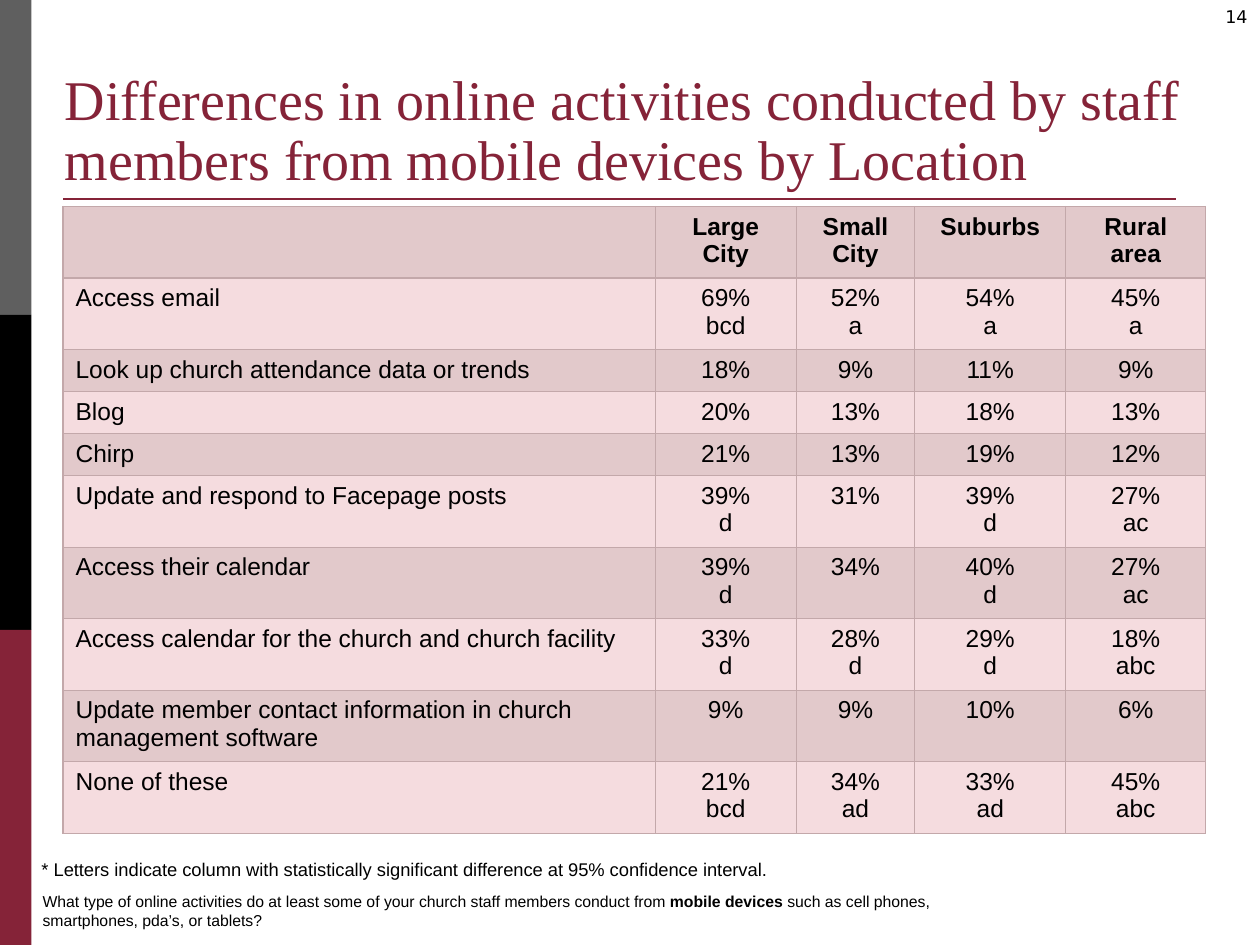
from dataclasses import dataclass

from lxml import etree
from pptx import Presentation
from pptx.dml.color import RGBColor
from pptx.enum import shapes, text
from pptx.oxml import ns
from pptx.util import Pt


@dataclass(frozen=True)
class Theme:
    maroon: str = "852338"
    gray: str = "5F5F5F"
    black: str = "000000"
    band: str = "E2C9CB"
    pale: str = "F5DCDF"
    border: str = "C3A8AA"
    heading_font: str = "Times New Roman"
    body_font: str = "Arial"
    number_font: str = "DejaVu Sans"
    title_size: float = 32
    table_size: float = 14
    note_size: float = 10.5
    question_size: float = 9
    number_size: float = 10


THEME = Theme()
BORDER_WIDTH = 0.75
SINGLE_ROW, DOUBLE_ROW = 22.9, 38.7
COLUMN_WIDTHS = [338.4, 80.64, 67.68, 86.4, 79.92]
LOCATIONS = ["", "Large City", "Small City", "Suburbs", "Rural area"]
ACTIVITIES = [
    ["Access email", "69%\nbcd", "52%\na", "54%\na", "45%\na"],
    ["Look up church attendance data or trends", "18%", "9%", "11%", "9%"],
    ["Blog", "20%", "13%", "18%", "13%"],
    ["Chirp", "21%", "13%", "19%", "12%"],
    ["Update and respond to Facepage posts", "39%\nd", "31%", "39%\nd", "27%\nac"],
    ["Access their calendar", "39%\nd", "34%", "40%\nd", "27%\nac"],
    ["Access calendar for the church and church facility",
     "33%\nd", "28%\nd", "29%\nd", "18%\nabc"],
    ["Update member contact information in church management software",
     "9%", "9%", "10%", "6%"],
    ["None of these", "21%\nbcd", "34%\nad", "33%\nad", "45%\nabc"],
]
DOUBLE_ROWS = {0, 1, 5, 6, 7, 8, 9}


def rgb(color):
    return RGBColor.from_string(color)


def add_run(paragraph, words, font, size, color=THEME.black, bold=False):
    run = paragraph.add_run()
    run.text = words
    run.font.name, run.font.size, run.font.bold = font, Pt(size), bold
    run.font.color.rgb = rgb(color)


def add_paragraph_box(slide, box, anchor=text.MSO_ANCHOR.TOP):
    """Add a wrapping text box and return its first paragraph."""
    frame = slide.shapes.add_textbox(*map(Pt, box)).text_frame
    frame.word_wrap = True
    frame.vertical_anchor = anchor
    return frame.paragraphs[0]


def add_side_bar(slide, box):
    left, top, width, height = box
    colors = [THEME.gray, THEME.black, THEME.maroon]
    step = height / len(colors)
    for index, color in enumerate(colors):
        block = slide.shapes.add_shape(
            shapes.MSO_SHAPE.RECTANGLE,
            Pt(left), Pt(top + index * step), Pt(width), Pt(step))
        block.shadow.inherit = False
        block.fill.solid()
        block.fill.fore_color.rgb = rgb(color)
        block.line.fill.background()


def add_title(slide, box):
    left, top, width, height = box
    heading = add_paragraph_box(slide, box, text.MSO_ANCHOR.BOTTOM)
    heading.line_spacing = 0.9
    add_run(heading, "Differences in online activities conducted by staff "
            "members from mobile devices by Location",
            THEME.heading_font, THEME.title_size, THEME.maroon)
    bottom = Pt(top + height)
    rule = slide.shapes.add_connector(
        shapes.MSO_CONNECTOR.STRAIGHT,
        Pt(left + 6), bottom, Pt(left + width - 12), bottom)
    rule.line.color.rgb = rgb(THEME.maroon)
    rule.line.width = Pt(1.5)
    etree.SubElement(rule._element.spPr, ns.qn("a:effectLst"))


def add_page_number(slide, box):
    number = add_paragraph_box(slide, box)
    number.alignment = text.PP_ALIGN.RIGHT
    add_run(number, "14", THEME.number_font, THEME.number_size)


def set_borders(cell):
    properties = cell._tc.get_or_add_tcPr()
    for index, side in enumerate(("lnL", "lnR", "lnT", "lnB")):
        line = etree.Element(ns.qn(f"a:{side}"), w=str(Pt(BORDER_WIDTH)))
        fill = etree.SubElement(line, ns.qn("a:solidFill"))
        etree.SubElement(fill, ns.qn("a:srgbClr"), val=THEME.border)
        properties.insert(index, line)


def fill_cell(cell, words, banded, centered, bold):
    cell.fill.solid()
    cell.fill.fore_color.rgb = rgb(THEME.band if banded else THEME.pale)
    set_borders(cell)
    paragraph = cell.text_frame.paragraphs[0]
    if centered:
        paragraph.alignment = text.PP_ALIGN.CENTER
    paragraph.font.size = Pt(THEME.table_size)
    for index, line in enumerate(words.split("\n") if words else []):
        if index:
            paragraph.add_line_break()
        add_run(paragraph, line, THEME.body_font, THEME.table_size, bold=bold)


def add_activity_table(slide, left, top):
    rows = [LOCATIONS] + ACTIVITIES
    heights = [DOUBLE_ROW if index in DOUBLE_ROWS else SINGLE_ROW
               for index in range(len(rows))]
    table = slide.shapes.add_table(
        len(rows), len(COLUMN_WIDTHS), Pt(left), Pt(top),
        Pt(sum(COLUMN_WIDTHS)), Pt(sum(heights))).table
    for column, width in zip(table.columns, COLUMN_WIDTHS):
        column.width = Pt(width)
    for r, (values, height) in enumerate(zip(rows, heights)):
        table.rows[r].height = Pt(height)
        for c, words in enumerate(values):
            fill_cell(table.cell(r, c), words, banded=r % 2 == 0,
                      centered=c > 0, bold=r == 0)


def add_significance_note(slide, box):
    add_run(add_paragraph_box(slide, box),
            "* Letters indicate column with statistically significant "
            "difference at 95% confidence interval.",
            THEME.body_font, THEME.note_size)


def add_survey_question(slide, box):
    question = add_paragraph_box(slide, box)
    for words, bold in [
        ("What type of online activities do at least some of your church "
         "staff members conduct from ", False),
        ("mobile devices", True),
        (" such as cell phones, smartphones, pda’s, or tablets?", False),
    ]:
        add_run(question, words, THEME.body_font, THEME.question_size, bold=bold)


def main():
    deck = Presentation()
    deck.slide_width, deck.slide_height = Pt(720), Pt(540)
    slide = deck.slides.add_slide(deck.slide_layouts[6])
    add_side_bar(slide, (0, 0, 18, 540))
    add_page_number(slide, (684, 0, 36, 24))
    add_title(slide, (30, 39.6, 654, 74.16))
    add_activity_table(slide, 36, 118)
    add_survey_question(slide, (17.3, 506.2, 551.5, 28.8))
    add_significance_note(slide, (16.6, 486.7, 450, 20.2))
    deck.save("out.pptx")


if __name__ == "__main__":
    main()
